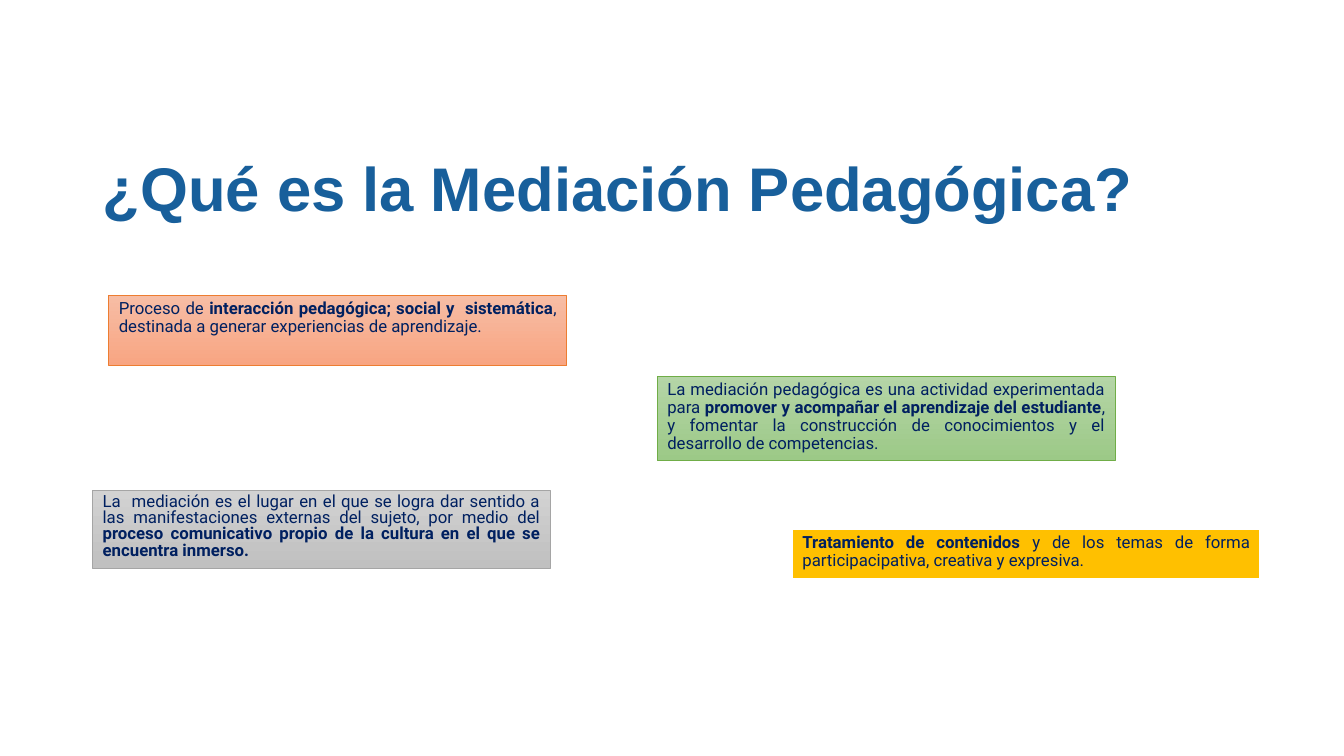
from dataclasses import dataclass

from pptx import Presentation
from pptx.dml.color import RGBColor
from pptx.enum.shapes import MSO_SHAPE
from pptx.enum.text import MSO_ANCHOR, PP_ALIGN
from pptx.util import Pt

PX = 9144  # EMU per px, 100 px to the inch


@dataclass(frozen=True)
class Theme:
    title_font: str = "Arial"
    title_size: int = 44
    title_color: str = "185F9B"
    body_font: str = "Roboto"
    body_size: int = 12
    body_color: str = "002060"
    # Each style: fill colours from top to bottom, line colour, line width
    orange: tuple = (("F7BDA5", "F8A582"), "ED7D31", 0.5)
    gray: tuple = (("D2D2D2", "C0C0C0"), "A5A5A5", 0.5)
    green: tuple = (("B5D5A7", "9CC987"), "70AD47", 0.5)
    gold: tuple = (("FFC000",), "FFFFFF", 1.5)


THEME = Theme()

TITLE_BOX = (92, 140, 1150, 99)

# Box, style, line spacing, runs of (text, bold)
CARDS = [
    ((108, 293, 454, 70), THEME.orange, 0.9, [
        ("Proceso de ", False),
        ("interacción pedagógica; social y  sistemática", True),
        (", destinada a generar experiencias de aprendizaje.", False)]),
    ((92, 486, 454, 78), THEME.gray, 0.8, [
        ("La  mediación es el lugar en el que se logra dar sentido a las "
         "manifestaciones externas del sujeto, por medio del ", False),
        ("proceso comunicativo propio de la cultura en el que se encuentra "
         "inmerso.", True)]),
    ((652, 373, 454, 84), THEME.green, 0.9, [
        ("La mediación pedagógica es una actividad experimentada para ", False),
        ("promover y acompañar el aprendizaje del estudiante", True),
        (", y fomentar la construcción de conocimientos y el desarrollo de "
         "competencias.", False)]),
    ((786, 525, 464, 49), THEME.gold, 0.9, [
        ("Tratamiento de contenidos ", True),
        ("y de los temas de forma participacipativa, creativa y expresiva.",
         False)]),
]


def set_attributes(target, values):
    for name, value in values.items():
        setattr(target, name, value)


def to_emu(box):
    return [length * PX for length in box]


def write_paragraph(shape, runs, anchor, paragraph_format, font_format, color):
    frame = shape.text_frame
    set_attributes(frame, {"word_wrap": True, "vertical_anchor": anchor})
    paragraph = frame.paragraphs[0]
    set_attributes(paragraph, paragraph_format)
    for text, bold in runs:
        run = paragraph.add_run()
        run.text = text
        set_attributes(run.font, {**font_format, "bold": bold})
        run.font.color.rgb = RGBColor.from_string(color)


def add_title(slide, box):
    shape = slide.shapes.add_textbox(*to_emu(box))
    write_paragraph(
        shape, [("¿Qué es la Mediación Pedagógica?", True)], MSO_ANCHOR.MIDDLE,
        {"alignment": PP_ALIGN.LEFT, "line_spacing": 0.9},
        {"name": THEME.title_font, "size": Pt(THEME.title_size)},
        THEME.title_color)


def paint(shape, style):
    colors, line_color, line_width = style
    if len(colors) == 1:
        shape.fill.solid()
        shape.fill.fore_color.rgb = RGBColor.from_string(colors[0])
    else:
        shape.fill.gradient()
        shape.fill.gradient_angle = 270  # top to bottom
        for stop, color in zip(shape.fill.gradient_stops, colors):
            stop.color.rgb = RGBColor.from_string(color)
    shape.line.color.rgb = RGBColor.from_string(line_color)
    shape.line.width = Pt(line_width)
    shape.shadow.inherit = False


def add_card(slide, box, style, line_spacing, runs):
    shape = slide.shapes.add_shape(MSO_SHAPE.RECTANGLE, *to_emu(box))
    paint(shape, style)
    write_paragraph(
        shape, runs, MSO_ANCHOR.TOP,
        {"alignment": PP_ALIGN.JUSTIFY, "line_spacing": line_spacing},
        {"name": THEME.body_font, "size": Pt(THEME.body_size)},
        THEME.body_color)


def main():
    presentation = Presentation()
    set_attributes(presentation,
                   {"slide_width": 1333 * PX, "slide_height": 750 * PX})
    slide = presentation.slides.add_slide(presentation.slide_layouts[6])

    # Heading
    add_title(slide, TITLE_BOX)

    # Definition cards
    for box, style, line_spacing, runs in CARDS:
        add_card(slide, box, style, line_spacing, runs)

    presentation.save("out.pptx")


if __name__ == "__main__":
    main()
